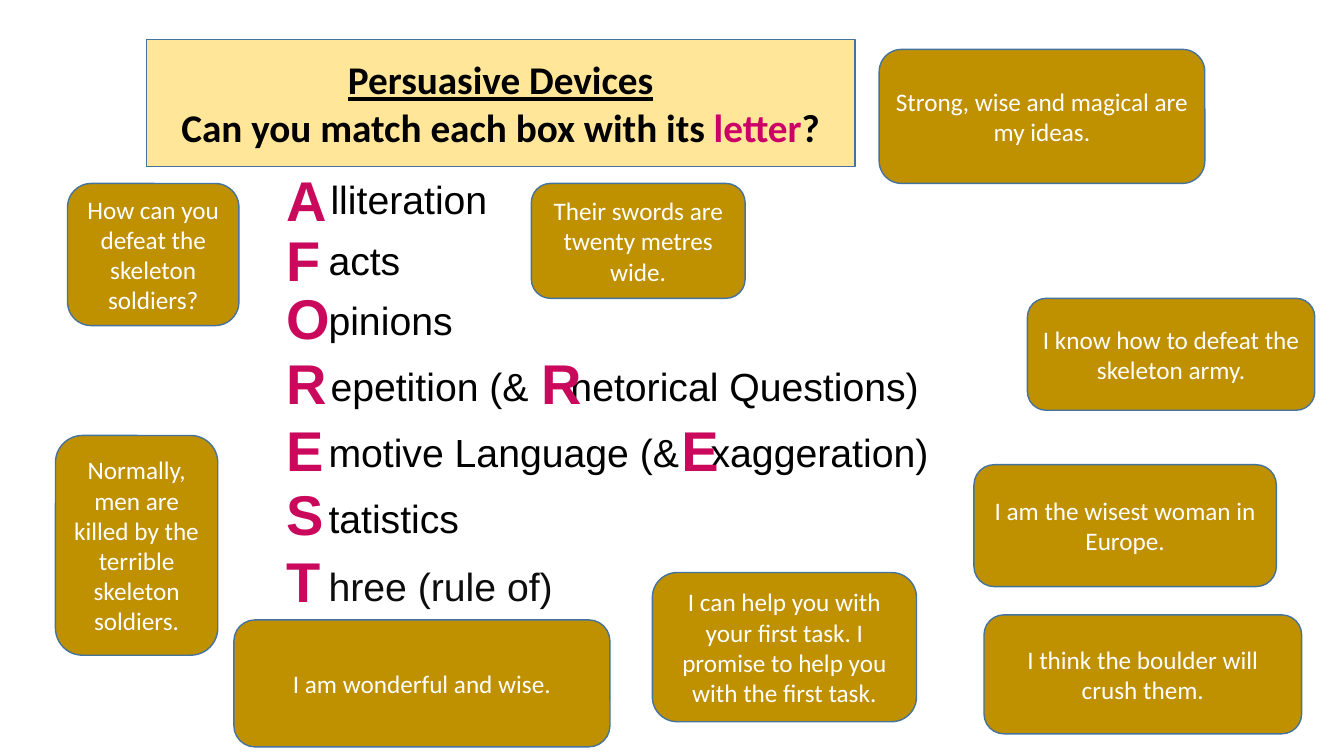
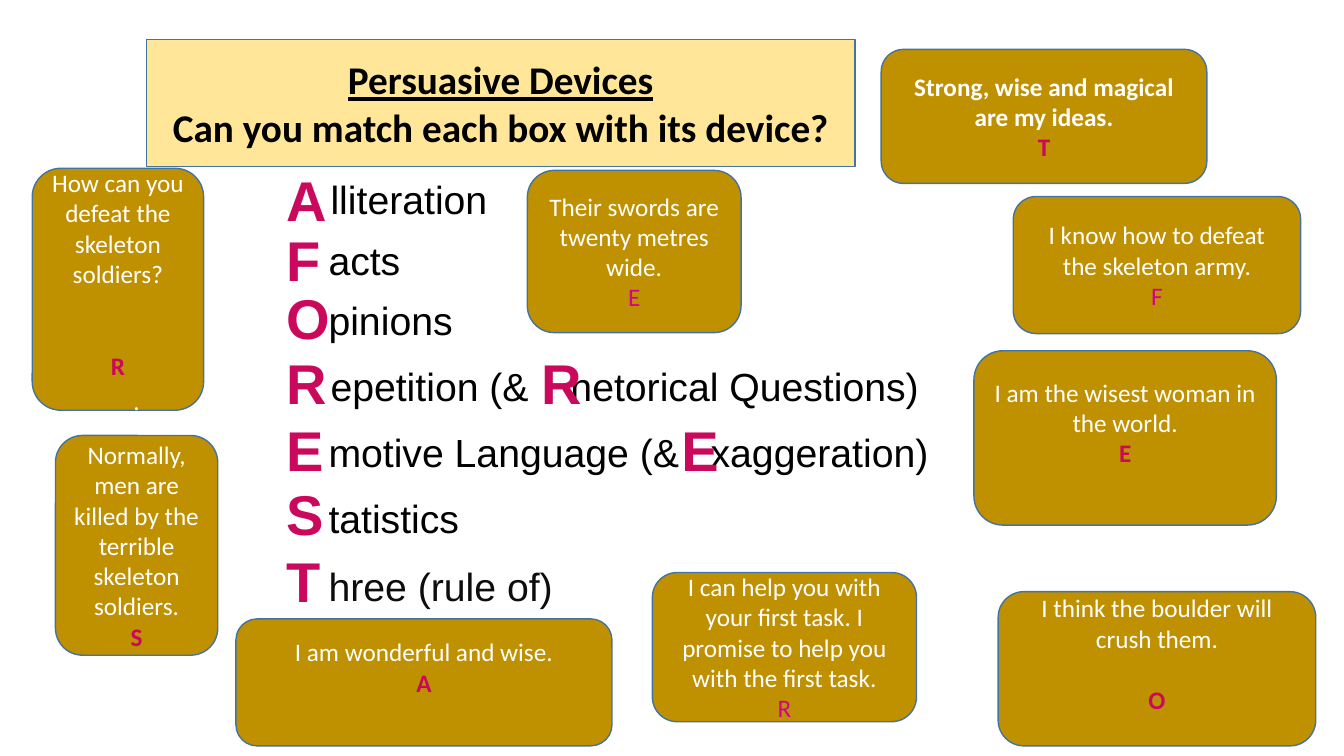
from lxml.etree import SubElement
from pptx import Presentation
from pptx.dml.color import RGBColor
from pptx.enum.shapes import MSO_SHAPE
from pptx.enum.text import MSO_ANCHOR, MSO_AUTO_SIZE, PP_ALIGN
from pptx.oxml.ns import qn
from pptx.util import Inches, Pt

BLACK = RGBColor(0x00, 0x00, 0x00)
INK = RGBColor(0x0D, 0x0D, 0x0D)
WHITE = RGBColor(0xFF, 0xFF, 0xFF)
CREAM = RGBColor(0xFF, 0xE6, 0x99)
GOLD = RGBColor(0xBF, 0x90, 0x00)
EDGE = RGBColor(0x43, 0x73, 0x9E)
ROSE = RGBColor(0xCA, 0x08, 0x5C)
PINK = RGBColor(0xCC, 0x00, 0x66)
PLUM = RGBColor(0xD6, 0x00, 0x93)

HEAD = "Persuasive Devices"
LEAD = "Can you match each box with its "
LINE = 22

ROWS = [
    ("A", 1.59, "lliteration", 3.18, 1.69, 2.89),
    ("F", 2.19, "acts", 3.16, 2.3, 2.89),
    ("O", 2.76, "pinions", 3.16, 2.89, 2.89),
    ("R", 3.41, "epetition (&\thetorical Questions)", 3.18, 3.55, 7.02),
    ("E", 4.07, "motive Language (&\txaggeration)", 3.16, 4.2, 7.39),
    ("S", 4.71, "tatistics", 3.16, 4.85, 2.89),
    ("T", 5.37, "hree (rule of)", 3.16, 5.53, 2.89),
]
TABS = {"R": 2.38, "E": 3.79}
EXTRA = [("R", 5.27, 3.41), ("E", 6.66, 4.07)]

PRAISE = "I am wonderful and wise."
ARMY = "I know how to defeat the skeleton army."
TASK = ("I can help you with your first task. "
        "I promise to help you with the first task.")
ASK = "How can you defeat the skeleton soldiers?"
KILL = "Normally, men are killed by the terrible skeleton soldiers."
SWORDS = "Their swords are twenty metres wide."
IDEAS = "Strong, wise and magical are my ideas."
ROCK = "I think the boulder will crush them."

QUIZ = [
    dict(text=PRAISE, at=(2.32, 6.15, 3.73, 1.26)),
    dict(text=ARMY, at=(10.19, 2.96, 2.85, 1.11)),
    dict(text="I am the wisest woman in Europe.", at=(9.66, 4.61, 3, 1.21)),
    dict(text=TASK, at=(6.47, 5.68, 2.62, 1.48)),
    dict(text=ASK, at=(0.67, 1.82, 1.7, 1.41)),
    dict(text=KILL, at=(0.55, 4.32, 1.61, 2.18)),
    dict(text=SWORDS, at=(5.27, 1.82, 2.12, 1.14)),
    dict(text=IDEAS, at=(8.72, 0.49, 3.23, 1.33)),
    dict(text=ROCK, at=(9.76, 6.1, 3.15, 1.18)),
]
KEY = [
    dict(text=PRAISE, at=(2.34, 6.14, 3.73, 1.26), key="A", tail=1),
    dict(text=ARMY, at=(10.05, 1.95, 2.85, 1.36), key="F", tint=PLUM),
    dict(text="I am the wisest woman in the world.",
         at=(9.66, 3.48, 3, 1.73), key="E", tail=1),
    dict(text=TASK, at=(6.47, 5.68, 2.62, 1.48), key="R", tint=PLUM),
    dict(text=ASK, at=(0.32, 1.67, 1.7, 2.4), key="R", gap=2, tail=1),
    dict(text=KILL, at=(0.55, 4.32, 1.61, 2.18), key="S"),
    dict(text=SWORDS, at=(5.23, 1.69, 2.12, 1.61), key="E", tint=PLUM),
    dict(text=IDEAS, at=(8.74, 0.49, 3.23, 1.33), key="T", bold=True),
    dict(text=ROCK, at=(9.9, 5.87, 3.15, 1.53), key="O", gap=1, tail=1),
]
DOT = (0.55, 3.77, 1.61, 0.4)
SLIDES = [
    ([(LEAD, BLACK), ("letter", PINK), ("?", BLACK)], QUIZ),
    ([(LEAD + "device?", BLACK)], KEY),
]


def style(font, name, size, color, bold=False):
    font.name, font.size, font.bold = name, Pt(size), bold
    font.color.rgb = color


def paint(shape, color):
    shape.fill.solid()
    shape.fill.fore_color.rgb = color
    shape.line.color.rgb = EDGE
    shape.line.width = Pt(1)


def label(slide, text, at, name, size, color, bold=False, tab=None):
    box = slide.shapes.add_textbox(*map(Inches, at))
    box.text_frame.word_wrap = True
    para = box.text_frame.paragraphs[0]
    para.text = text
    if tab:
        stops = SubElement(para._p.get_or_add_pPr(), qn("a:tabLst"))
        SubElement(stops, qn("a:tab"), pos=str(Inches(tab)), algn="l")
    for run in para.runs:
        style(run.font, name, size, color, bold)
    return para


def title(slide, parts):
    box = slide.shapes.title
    box.left, box.top, box.width, box.height = map(
        Inches, (1.45, 0.39, 7.03, 1.26))
    geom = SubElement(box._element.spPr, qn("a:prstGeom"), prst="roundRect")
    SubElement(geom, qn("a:avLst"))
    paint(box, CREAM)
    frame = box.text_frame
    frame.text = HEAD
    frame.word_wrap = True
    frame.auto_size = MSO_AUTO_SIZE.NONE
    frame.vertical_anchor = MSO_ANCHOR.MIDDLE
    last = frame.add_paragraph()
    for text, color in parts:
        run = last.add_run()
        run.text = text
        style(run.font, "Calibri", 28, color, True)
    first = frame.paragraphs[0]
    style(first.runs[0].font, "Calibri", 28, BLACK, True)
    first.runs[0].font.underline = True
    for para in frame.paragraphs:
        para.alignment = PP_ALIGN.CENTER


def acrostic(slide):
    for head, top, rest, left, down, wide in ROWS:
        label(slide, head, (2.74, top, 0.87, 0.77), "Arial", 40, ROSE, True)
        label(slide, rest, (left, down, wide, 0.57), "Arial", 28,
              INK if head == "T" else BLACK, tab=TABS.get(head))
    for head, left, top in EXTRA:
        label(slide, head, (left, top, 0.87, 0.77), "Arial", 40, ROSE, True)


def card(slide, text, at, key=None, tint=ROSE, bold=False, gap=0, tail=0):
    box = slide.shapes.add_shape(MSO_SHAPE.ROUNDED_RECTANGLE,
                                 *map(Inches, at))
    box.shadow.inherit = False
    paint(box, GOLD)
    frame = box.text_frame
    frame.word_wrap = True
    frame.vertical_anchor = MSO_ANCHOR.MIDDLE
    frame.margin_top, frame.margin_bottom = 0, Pt(LINE * tail)
    para = frame.paragraphs[0]
    para.text = text
    para.alignment = PP_ALIGN.CENTER
    style(para.runs[0].font, "Calibri", 18, WHITE, bold)
    if key:
        para = frame.add_paragraph()
        para.text = key
        para.alignment = PP_ALIGN.CENTER
        para.space_before = Pt(LINE * gap)
        style(para.runs[0].font, "Calibri", 18, tint, tint == ROSE)


def main():
    deck = Presentation()
    deck.slide_width, deck.slide_height = Inches(13.33), Inches(7.5)
    for parts, cards in SLIDES:
        slide = deck.slides.add_slide(deck.slide_layouts[5])
        title(slide, parts)
        acrostic(slide)
        for item in cards:
            card(slide, **item)
    dot = label(slide, ".", DOT, "Calibri", 18, WHITE)
    dot.alignment = PP_ALIGN.CENTER
    deck.save("out.pptx")


if __name__ == "__main__":
    main()
